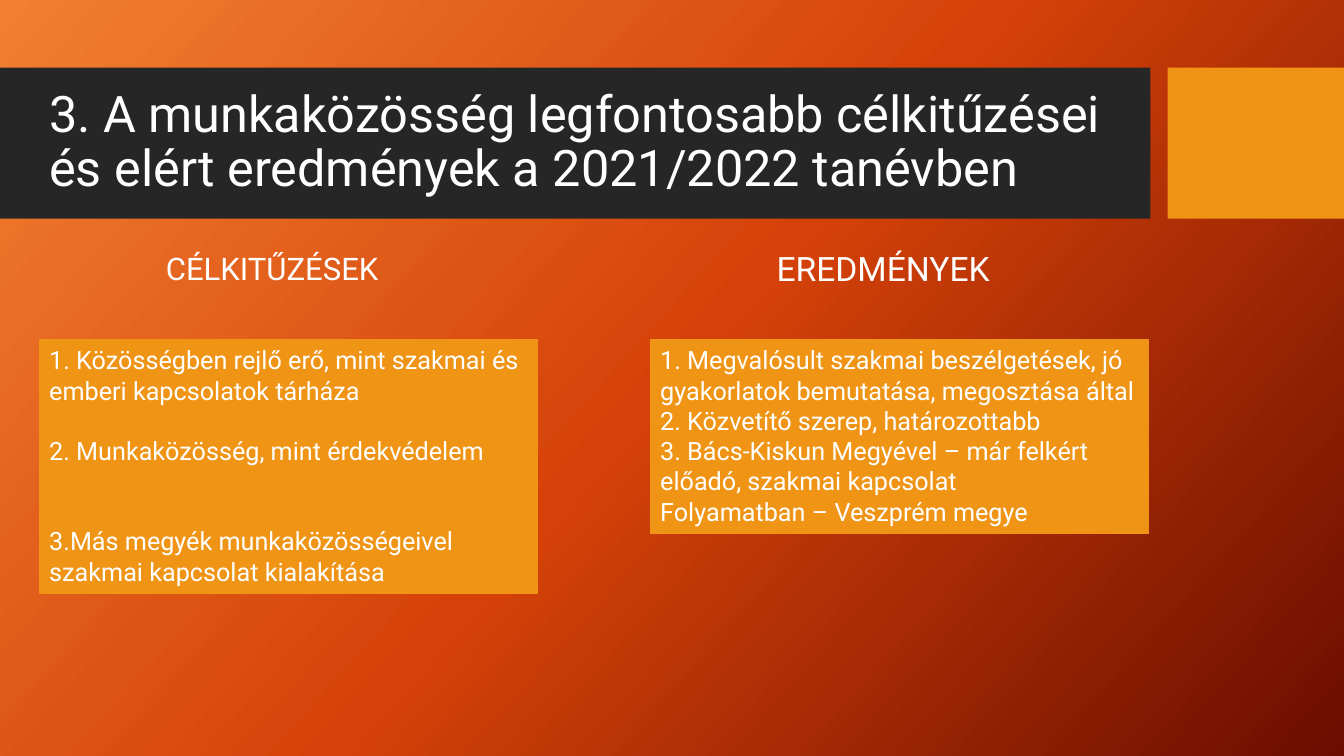
from copy import deepcopy

from pptx import Presentation
from pptx.dml.color import RGBColor
from pptx.enum.shapes import MSO_SHAPE
from pptx.enum.text import MSO_ANCHOR, MSO_AUTO_SIZE, PP_ALIGN
from pptx.oxml.ns import qn
from pptx.util import Inches, Pt

RECTANGLE = MSO_SHAPE.RECTANGLE
TOP, MIDDLE = MSO_ANCHOR.TOP, MSO_ANCHOR.MIDDLE
GROW = MSO_AUTO_SIZE.SHAPE_TO_FIT_TEXT
LEFT, CENTER = PP_ALIGN.LEFT, PP_ALIGN.CENTER

COLORS = {
    "light": "F18031",
    "middle": "D54209",
    "dark": "6A0D00",
    "band": "262626",
    "accent": "F09415",
    "text": "FFFFFF",
}
FONT = "Roboto"
WIDTH, HEIGHT = 13.33, 7.5
MARGIN = 0.39
COLUMN_STEP = 6.06
PANEL_TOP, PANEL_WIDTH = 3.37, 4.94
HEADING_LEFT, HEADING_WIDTH, HEADING_MIDDLE = 0.95, 3.5, 2.565
BODY_SIZE, BODY_LINE = 18, 21.5

TITLE = "3. A munkaközösség legfontosabb célkitűzései és elért eredmények a 2021/2022 tanévben"
COLUMNS = [
    {
        "heading": "CÉLKITŰZÉSEK", "size": 22.2, "heading_height": 0.63, "panel_height": 2.52,
        "items": [
            ("1. Közösségben rejlő erő, mint szakmai és emberi kapcsolatok tárháza", 0),
            ("2. Munkaközösség, mint érdekvédelem", 1),
            ("3.Más megyék munkaközösségeivel szakmai kapcsolat kialakítása", 2),
        ],
    },
    {
        "heading": "EREDMÉNYEK", "size": 24, "heading_height": 0.81, "panel_height": 1.92,
        "items": [
            ("1. Megvalósult szakmai beszélgetések, jó gyakorlatok bemutatása, megosztása által", 0),
            ("2. Közvetítő szerep, határozottabb", 0),
            ("3. Bács-Kiskun Megyével – már felkért előadó, szakmai kapcsolat", 0),
            ("Folyamatban – Veszprém megye", 0),
        ],
    },
]


def color(name):
    """Return the named colour."""
    return RGBColor.from_string(COLORS[name])


def paint_background(slide):
    """Fill the slide with the diagonal three-colour gradient."""
    fill = slide.background.fill
    fill.gradient()
    fill.gradient_angle = 360 - 42
    stop_list = next(slide.element.iter(qn("a:gsLst")))
    stop_list.append(deepcopy(stop_list[0]))
    for index, (stop, name) in enumerate(zip(fill.gradient_stops, ("light", "middle", "dark"))):
        stop.color.rgb = color(name)
        stop.position = index / 2


def add_rectangle(slide, box, fill_name):
    """Add a flat rectangle in the given box."""
    shape = slide.shapes.add_shape(RECTANGLE, *map(Inches, box))
    shape.shadow.inherit = False
    shape.fill.solid()
    shape.fill.fore_color.rgb = color(fill_name)
    shape.line.fill.background()
    return shape


def add_text(paragraph, text, size, alignment=LEFT):
    """Add one white run to a paragraph."""
    paragraph.alignment = alignment
    run = paragraph.add_run()
    run.text = text
    run.font.name = FONT
    run.font.size = Pt(size)
    run.font.color.rgb = color("text")


def add_label(slide, box, text, size, alignment, line_spacing):
    """Add a vertically centred text box and return its frame."""
    frame = slide.shapes.add_textbox(*map(Inches, box)).text_frame
    frame.word_wrap = True
    frame.vertical_anchor = MIDDLE
    paragraph = frame.paragraphs[0]
    paragraph.line_spacing = line_spacing
    add_text(paragraph, text, size, alignment)
    return frame


def add_header(slide, top, height):
    """Add the title band and the accent block beside it."""
    add_rectangle(slide, (0, top, 11.41, height), "band")
    add_rectangle(slide, (11.58, top, WIDTH - 11.58, height), "accent")
    title_height = 1.02
    title_top = top + (height - title_height) / 2
    add_label(slide, (MARGIN, title_top, 10.8, title_height), TITLE, 36, LEFT, 0.9)


def add_column(slide, offset, column):
    """Add a heading and its filled panel at a horizontal offset."""
    height = column["heading_height"]
    heading_box = (HEADING_LEFT + offset, HEADING_MIDDLE - height / 2, HEADING_WIDTH, height)
    heading = add_label(slide, heading_box, column["heading"], column["size"], CENTER, 1.0)
    heading.margin_top, heading.margin_bottom = Inches(0.18), 0

    panel_box = (MARGIN + offset, PANEL_TOP, PANEL_WIDTH, column["panel_height"])
    panel = add_rectangle(slide, panel_box, "accent")
    panel.line.color.rgb = color("accent")
    panel.line.width = Pt(0.75)
    frame = panel.text_frame
    frame.word_wrap = True
    frame.auto_size = GROW
    frame.vertical_anchor = TOP
    for index, (text, gap_lines) in enumerate(column["items"]):
        paragraph = frame.add_paragraph() if index else frame.paragraphs[0]
        if gap_lines:
            paragraph.space_before = Pt(gap_lines * BODY_LINE)
        add_text(paragraph, text, BODY_SIZE)


def main():
    """Build and save the presentation."""
    presentation = Presentation()
    presentation.slide_width, presentation.slide_height = Inches(WIDTH), Inches(HEIGHT)
    slide = presentation.slides.add_slide(presentation.slide_layouts[6])
    paint_background(slide)
    add_header(slide, 0.67, 1.5)
    for index, column in enumerate(COLUMNS):
        add_column(slide, index * COLUMN_STEP, column)
    presentation.save("out.pptx")


if __name__ == "__main__":
    main()
